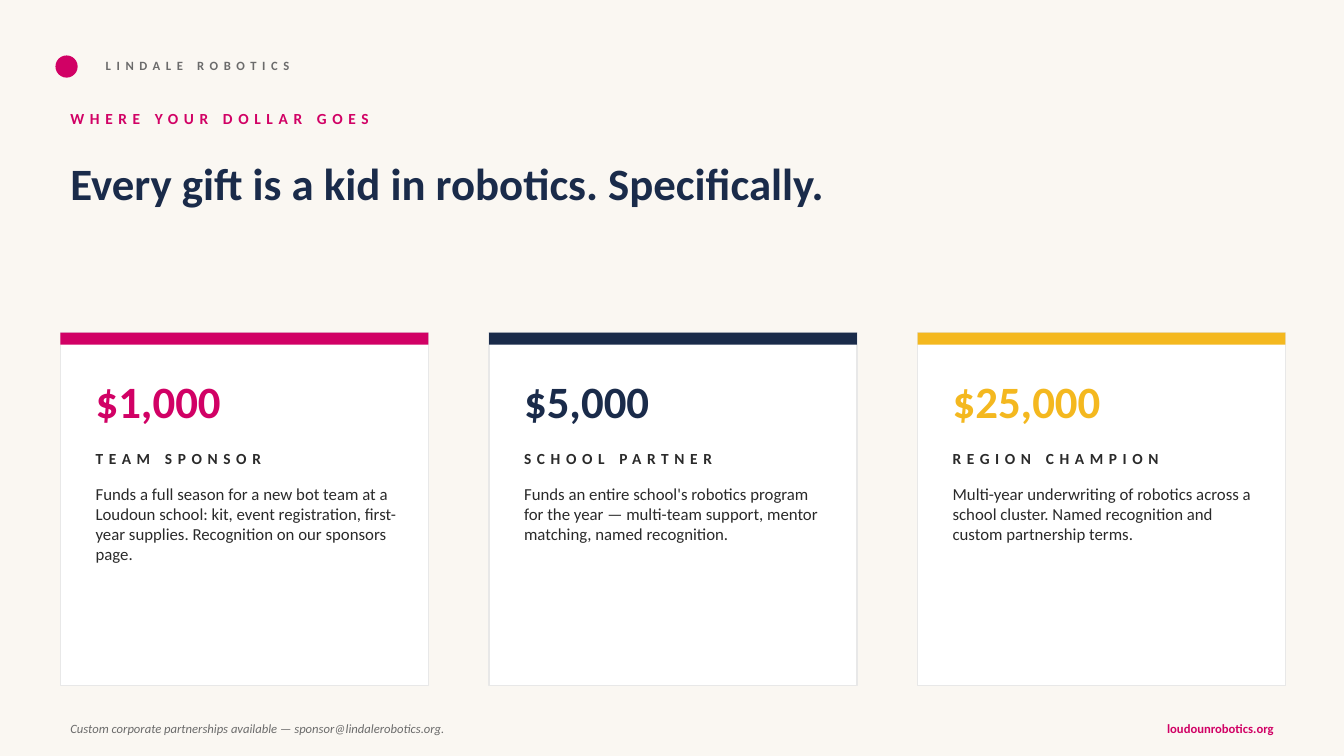
"""Build the sponsor levels slide."""
from dataclasses import dataclass

import pptx
import pptx.dml.color
import pptx.enum.shapes
import pptx.enum.text
import pptx.slide
import pptx.util

Inches = pptx.util.Inches
Shape = pptx.enum.shapes.MSO_SHAPE
Anchor = pptx.enum.text.MSO_ANCHOR
Align = pptx.enum.text.PP_ALIGN
Box = tuple[float, float, float, float]

PINK, NAVY, GOLD = "D10165", "1A2B4A", "F4B81F"
INK, GREY, CREAM, WHITE, EDGE = "2A2A2A", "6B6B6B", "FAF7F2", "FFFFFF", "E8E8E8"


@dataclass(frozen=True)
class Style:
    """Look of a text label."""
    size: int
    color: str
    bold: bool = False
    italic: bool = False
    track: int = 0
    anchor: Anchor = Anchor.MIDDLE
    align: Align = Align.LEFT


@dataclass(frozen=True)
class Level:
    """One giving level."""
    price: str
    title: str
    body: str
    color: str


LEVELS = [
    Level("$1,000", "TEAM SPONSOR",
          "Funds a full season for a new bot team at a Loudoun school: kit, event "
          "registration, first-year supplies. Recognition on our sponsors page.", PINK),
    Level("$5,000", "SCHOOL PARTNER",
          "Funds an entire school's robotics program for the year — multi-team support, "
          "mentor matching, named recognition.", NAVY),
    Level("$25,000", "REGION CHAMPION",
          "Multi-year underwriting of robotics across a school cluster. Named recognition "
          "and custom partnership terms.", GOLD),
]
LEFT, TOP, WIDTH, HEIGHT, STEP, PAD = 0.6, 3.3, 3.65, 3.5, 4.25, 0.25


def rgb(code: str) -> pptx.dml.color.RGBColor:
    """Turn a hex string into a colour."""
    return pptx.dml.color.RGBColor.from_string(code)


def shape(slide: pptx.slide.Slide, kind: Shape, box: Box, fill: str, line: str = "") -> None:
    """Draw a filled shape, outlined if a line colour is given."""
    item = slide.shapes.add_shape(kind, *map(Inches, box))
    item.shadow.inherit = False
    item.fill.solid()
    item.fill.fore_color.rgb = rgb(fill)
    if line:
        item.line.color.rgb = rgb(line)
        item.line.width = pptx.util.Pt(1)
    else:
        item.line.fill.background()


def label(slide: pptx.slide.Slide, box: Box, text: str, style: Style) -> None:
    """Write one wrapped text box."""
    frame = slide.shapes.add_textbox(*map(Inches, box)).text_frame
    frame.word_wrap = True
    frame.vertical_anchor = style.anchor
    para = frame.paragraphs[0]
    para.alignment = style.align
    run = para.add_run()
    run.text = text
    font = run.font
    font.name = "Calibri"
    font.size = pptx.util.Pt(style.size)
    font.bold = style.bold
    font.italic = style.italic
    font.color.rgb = rgb(style.color)
    if style.track:
        run._r.get_or_add_rPr().set("spc", str(style.track * 100))


def card(slide: pptx.slide.Slide, left: float, level: Level) -> None:
    """Draw the card of one giving level."""
    shape(slide, Shape.RECTANGLE, (left, TOP, WIDTH, HEIGHT), WHITE, EDGE)
    shape(slide, Shape.RECTANGLE, (left, TOP, WIDTH, 0.12), level.color)
    inner, wide = left + PAD, 3.2
    label(slide, (inner, TOP + PAD, wide, 0.85), level.price, Style(32, level.color, bold=True))
    label(slide, (inner, 4.4, wide, 0.3), level.title, Style(11, INK, bold=True, track=4))
    label(slide, (inner, 4.75, wide, 2), level.body, Style(12, INK, anchor=Anchor.TOP))


def main() -> None:
    """Build and save the slide."""
    deck = pptx.Presentation()
    deck.slide_width, deck.slide_height = Inches(13.33), Inches(7.5)
    slide = deck.slides.add_slide(deck.slide_layouts[6])
    slide.background.fill.solid()
    slide.background.fill.fore_color.rgb = rgb(CREAM)

    shape(slide, Shape.OVAL, (0.55, 0.55, 0.22, 0.22), PINK)
    label(slide, (0.95, 0.5, 5, 0.3), "LINDALE ROBOTICS", Style(9, GREY, bold=True, track=4))
    label(slide, (LEFT, 1, 8, 0.35), "WHERE YOUR DOLLAR GOES",
          Style(11, PINK, bold=True, track=4))
    label(slide, (LEFT, 1.5, 12.13, 1.15), "Every gift is a kid in robotics. Specifically.",
          Style(32, NAVY, bold=True, anchor=Anchor.TOP))

    for index, level in enumerate(LEVELS):
        card(slide, LEFT + index * STEP, level)

    label(slide, (LEFT, 7.08, 12.13, 0.3),
          "Custom corporate partnerships available — sponsor@lindalerobotics.org.",
          Style(9, GREY, italic=True))
    label(slide, (10.33, 7.08, 2.4, 0.3), "loudounrobotics.org",
          Style(9, PINK, bold=True, align=Align.RIGHT))
    deck.save("out.pptx")


if __name__ == "__main__":
    main()
